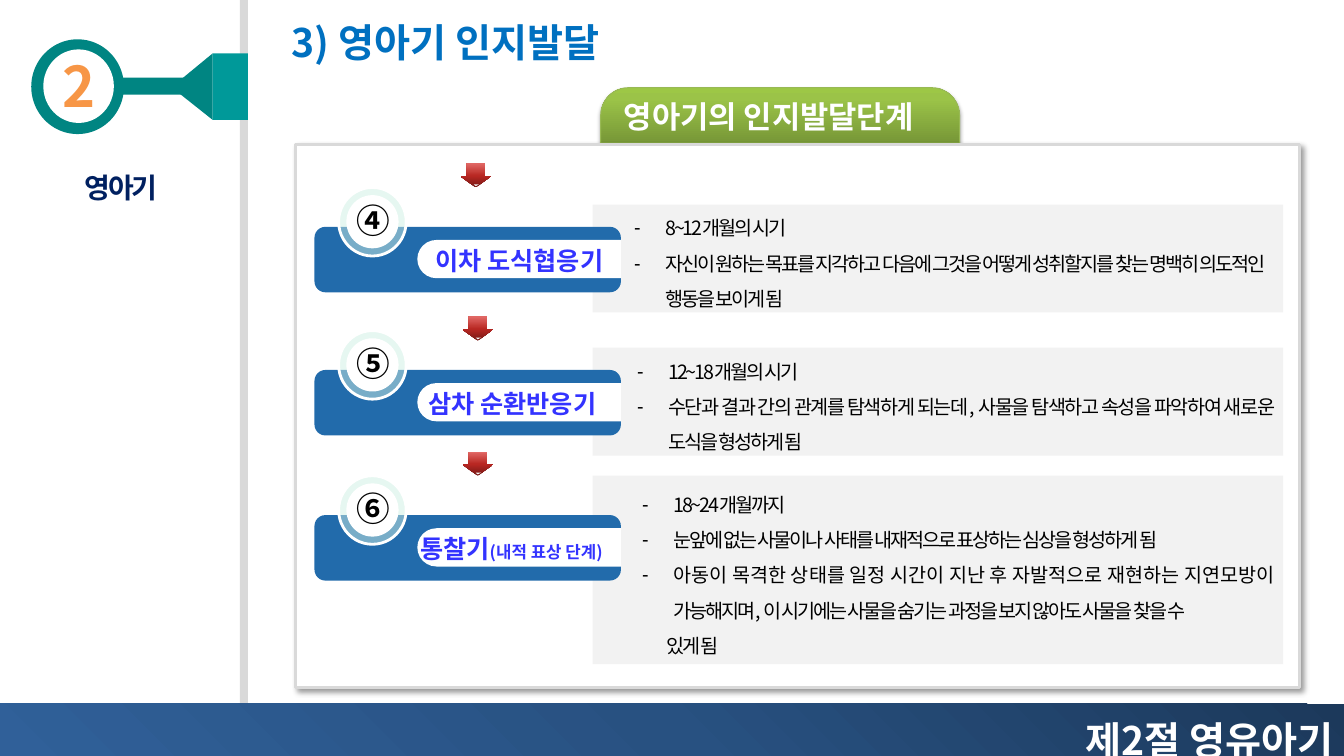
import dataclasses
import typing

import pptx
import pptx.dml.color
import pptx.enum.shapes
import pptx.enum.text
import pptx.oxml
import pptx.oxml.ns
import pptx.util

COLUMNS, ROWS = 80, 45
CELL = pptx.util.Inches(1) // 6
KIND = pptx.enum.shapes.MSO_SHAPE
ALIGN = pptx.enum.text.PP_ALIGN
Point = tuple[float, float]


class Style(typing.NamedTuple):
    size: float
    color: str
    bold: bool = True
    tracking: int = 0


class Gradient(typing.NamedTuple):
    stops: tuple[tuple[int, str], ...]
    angle: int


class Shadow(typing.NamedTuple):
    opacity: int
    blur: float
    distance: float
    angle: int


class Frame(typing.NamedTuple):
    column: float
    row: float
    columns: float
    rows: float


@dataclasses.dataclass(frozen=True)
class Theme:
    font: str = "Noto Sans CJK KR"
    white: str = "FFFFFF"
    rule: str = "D9D9D9"
    panel: str = "F2F2F2"
    teal: str = "008582"
    light_teal: str = "009999"
    bar: str = "226BAB"
    halo: str = "CFF0E5"
    tab_edge: str = "98B955"
    footer_fill: Gradient = Gradient(((0, "1C395B"), (50, "285181"), (100, "306099")), 135)
    tab_fill: Gradient = Gradient(((0, "779737"), (80, "9BC348"), (100, "9DC746")), 270)
    arrow_fill: Gradient = Gradient(((0, "761916"), (48, "B82722"), (100, "E26A67")), 270)
    chapter: Style = Style(40, "F79646")
    section: Style = Style(28, "FFFFFF")
    title: Style = Style(28, "0070C0")
    topic: Style = Style(20, "002060", tracking=-150)
    tab: Style = Style(22, "FFFFFF")
    number: Style = Style(24, "000000")
    label: Style = Style(18, "3333FF")
    label_note: Style = Style(12, "3333FF")
    body: Style = Style(14, "000000", False, -150)


THEME = Theme()


@dataclasses.dataclass(frozen=True)
class Para:
    spans: tuple[tuple[str, Style], ...]
    align: typing.Any = ALIGN.LEFT
    spacing: float = 1.0
    margin: float = 0
    bullet: bool = False


@dataclasses.dataclass(frozen=True)
class Stage:
    number: str
    label: tuple[tuple[str, Style], ...]
    label_column: float
    label_columns: float
    bar_row: float
    arrow: Point
    panel_row: float
    panel_rows: float
    list_frame: Frame
    placeholder: int
    items: tuple[Para, ...]


def item(text: str, align: typing.Any = ALIGN.LEFT) -> Para:
    return Para(((text, THEME.body),), align, 1.5, 1.86, True)


STAGES = (
    Stage("④", (("이차 도식협응기", THEME.label),), 25.32, 12.36, 13.5, (27.42, 9.72), 12.18, 6.42,
          Frame(37.14, 11.88, 39.96, 6.96), 1,
          (item("8~12개월의 시기"),
           item("자신이 원하는 목표를 지각하고 다음에 그것을 어떻게 성취할지를 찾는 명백히 의도적인 행동을 보이게 됨"))),
    Stage("⑤", (("삼차 순환반응기", THEME.label),), 24.9, 12.36, 22.02, (27.54, 18.84), 20.7, 6.42,
          Frame(37.32, 20.4, 39.06, 6.96), 2,
          (item("12~18개월의 시기"),
           item("수단과 결과 간의 관계를 탐색하게 되는데, 사물을 탐색하고 속성을 파악하여 새로운 도식을 형성하게 됨", ALIGN.JUSTIFY))),
    Stage("⑥", (("통찰기", THEME.label), ("(내적 표상 단계)", THEME.label_note)), 24.42, 13.26, 30.66,
          (27.54, 26.88), 28.32, 11.22, Frame(37.62, 28.32, 38.76, 11.22), 4,
          (item("18~24개월까지"),
           item("눈앞에 없는 사물이나 사태를 내재적으로 표상하는 심상을 형성하게 됨"),
           item("아동이 목격한 상태를 일정 시간이 지난 후 자발적으로 재현하는 지연모방이 가능해지며, "
                "이 시기에는 사물을 숨기는 과정을 보지 않아도 사물을 찾을 수", ALIGN.JUSTIFY),
           Para((("있게 됨", THEME.body),), spacing=1.5, margin=1.44))),
)
ARROW = ((0.9, 1.44), (1.8, 0.78), (1.44, 0.78), (1.44, 0), (0.36, 0), (0.36, 0.78), (0, 0.78))
ARROW_TIP = ((1.08, 1.26), (0.9, 1.36), (0.78, 1.26))
FLARE = ((10.62, 4.86), (12.66, 3.18), (12.66, 7.14), (10.62, 5.52))


def cells(count: float) -> int:
    return round(count * CELL)


def rgb(color: str) -> pptx.dml.color.RGBColor:
    return pptx.dml.color.RGBColor.from_string(color)


def element(tag: str, inner: str = "", **attributes: typing.Any) -> typing.Any:
    pairs = " ".join(f'{key}="{value}"' for key, value in attributes.items())
    return pptx.oxml.parse_xml(f'<a:{tag} {pptx.oxml.ns.nsdecls("a")} {pairs}>{inner}</a:{tag}>')


def paint(shape: typing.Any, fill: str | Gradient, line: tuple[str, float] | None = None,
          shadow: Shadow | None = None, opacity: int = 100) -> None:
    shape.shadow.inherit = False
    shape.fill.solid()
    solid = shape._element.spPr.find(pptx.oxml.ns.qn("a:solidFill"))
    if isinstance(fill, Gradient):
        stops = "".join(f'<a:gs pos="{place * 1000}"><a:srgbClr val="{color}"/></a:gs>' for place, color in fill.stops)
        inner = f'<a:gsLst>{stops}</a:gsLst><a:lin ang="{fill.angle * 60000}" scaled="0"/>'
        solid.getparent().replace(solid, element("gradFill", inner, rotWithShape=1))
    else:
        shape.fill.fore_color.rgb = rgb(fill)
        if opacity < 100:
            solid[0].append(element("alpha", val=opacity * 1000))
    if line:
        shape.line.color.rgb = rgb(line[0])
        shape.line.width = pptx.util.Pt(line[1])
    else:
        shape.line.fill.background()
    if shadow:
        tint = f'<a:srgbClr val="000000"><a:alpha val="{shadow.opacity * 1000}"/></a:srgbClr>'
        effects = shape._element.spPr.find(pptx.oxml.ns.qn("a:effectLst"))
        effects.append(element("outerShdw", tint, blurRad=pptx.util.Pt(shadow.blur), dist=pptx.util.Pt(shadow.distance),
                               dir=shadow.angle * 60000, rotWithShape=0))


def draw_shape(page: typing.Any, kind: typing.Any, frame: Frame, fill: str | Gradient,
               **finish: typing.Any) -> typing.Any:
    shape = page.shapes.add_shape(kind, *map(cells, frame))
    if kind == KIND.ROUND_2_SAME_RECTANGLE:
        shape.adjustments[0] = 0.5
    paint(shape, fill, **finish)
    return shape


def draw_outline(page: typing.Any, points: tuple[Point, ...], fill: str | Gradient, origin: Point = (0, 0)) -> None:
    corners = [(cells(origin[0] + column), cells(origin[1] + row)) for column, row in points]
    builder = page.shapes.build_freeform(*corners[0])
    builder.add_line_segments(corners[1:], close=True)
    paint(builder.convert_to_shape(), fill)


def write_para(para: typing.Any, content: Para) -> None:
    layout = {"alignment": content.align, "line_spacing": content.spacing,
              "space_before": pptx.util.Pt(0), "space_after": pptx.util.Pt(0)}
    for name, value in layout.items():
        setattr(para, name, value)
    properties = para._p.get_or_add_pPr()
    properties.set("marL", str(cells(content.margin)))
    properties.set("indent", str(-cells(content.margin) if content.bullet else 0))
    properties.append(element("buChar", char="-") if content.bullet else element("buNone"))
    for text, style in content.spans:
        span = para.add_run()
        span.text = text
        looks = {"size": pptx.util.Pt(style.size), "bold": style.bold, "name": THEME.font}
        for name, value in looks.items():
            setattr(span.font, name, value)
        span.font.color.rgb = rgb(style.color)
        run_properties = span._r.get_or_add_rPr()
        run_properties.set("spc", str(style.tracking))
        run_properties.find(pptx.oxml.ns.qn("a:latin")).addnext(element("ea", typeface=THEME.font))


def write(page: typing.Any, frame: Frame, paras: tuple[Para, ...], wrap: bool = False,
          placeholder: int | None = None) -> None:
    if placeholder is None:
        box = page.shapes.add_textbox(*map(cells, frame))
    else:
        box = next(holder for holder in page.placeholders if holder.placeholder_format.idx == placeholder)
        page.shapes._spTree.append(box._element)
        for name, value in zip(("left", "top", "width", "height"), frame):
            setattr(box, name, cells(value))
    settings = {"word_wrap": wrap, "auto_size": pptx.enum.text.MSO_AUTO_SIZE.SHAPE_TO_FIT_TEXT,
                "vertical_anchor": pptx.enum.text.MSO_ANCHOR.TOP}
    for name, value in settings.items():
        setattr(box.text_frame, name, value)
    for index, content in enumerate(paras):
        write_para(box.text_frame.add_paragraph() if index else box.text_frame.paragraphs[0], content)


def draw_surroundings(page: typing.Any) -> None:
    draw_shape(page, KIND.RECTANGLE, Frame(14.28, 0, 0.48, 42.36), THEME.rule)
    draw_shape(page, KIND.OVAL, Frame(1.86, 2.34, 5.52, 5.64), THEME.teal)
    draw_shape(page, KIND.OVAL, Frame(2.58, 2.94, 4.2, 4.38), THEME.white)
    draw_outline(page, FLARE, THEME.teal)
    draw_shape(page, KIND.RECTANGLE, Frame(12.66, 3.18, 2.1, 3.96), THEME.light_teal)
    draw_shape(page, KIND.RECTANGLE, Frame(7.02, 4.62, 4.62, 1.02), THEME.teal)
    write(page, Frame(3.12, 2.76, 3.18, 4.62), (Para((("2", THEME.chapter),), ALIGN.CENTER),))
    draw_shape(page, KIND.RECTANGLE, Frame(0, 41.88, COLUMNS, ROWS - 41.88), THEME.footer_fill)
    write(page, Frame(38.58, 40.92, 41.4, 4.86), (Para((("제2절 영유아기", THEME.section),), ALIGN.RIGHT, 1.5),), True)
    write(page, Frame(0, 8.82, 14.4, 3.24), (Para((("영아기", THEME.topic),), ALIGN.CENTER, 1.5),), True, 3)
    write(page, Frame(16.74, 0.78, 21.36, 3.42), (Para((("3) 영아기 인지발달", THEME.title),)),), placeholder=0)
    draw_shape(page, KIND.ROUND_2_SAME_RECTANGLE, Frame(35.76, 5.22, 21.36, 3.3), THEME.tab_fill,
               line=(THEME.tab_edge, 0.75), shadow=Shadow(35, 3.1, 1.8, 90))
    draw_shape(page, KIND.RECTANGLE, Frame(17.58, 8.58, 59.76, 32.34), THEME.white,
               line=(THEME.rule, 2), shadow=Shadow(40, 4, 3, 45))
    write(page, Frame(36.54, 5.52, 20.4, 2.82), (Para((("영아기의 인지발달단계", THEME.tab),)),))


def draw_stage(page: typing.Any, stage: Stage) -> None:
    row, edge = stage.bar_row, (THEME.white, 2)
    draw_shape(page, KIND.RECTANGLE, Frame(35.28, stage.panel_row, 41.1, stage.panel_rows), THEME.panel)
    draw_shape(page, KIND.ROUNDED_RECTANGLE, Frame(18.72, row, 18.24, 3.9), THEME.bar)
    draw_shape(page, KIND.ROUND_2_SAME_RECTANGLE, Frame(29.76, row - 4.14, 2.28, 12.12), THEME.white).rotation = 270
    draw_shape(page, KIND.OVAL, Frame(20.16, row - 2.34, 4.02, 4.08), THEME.halo, line=edge, opacity=50)
    draw_shape(page, KIND.OVAL, Frame(20.7, row - 1.8, 2.94, 3), THEME.white, line=edge)
    draw_outline(page, ARROW, THEME.arrow_fill, stage.arrow)
    draw_outline(page, ARROW_TIP, THEME.panel, stage.arrow)
    write(page, Frame(20.64, row - 1.92, 3.24, 3), (Para(((stage.number, THEME.number),)),))
    write(page, Frame(stage.label_column, row + 0.78, stage.label_columns, 2.4), (Para(stage.label),))
    write(page, stage.list_frame, stage.items, True, stage.placeholder)


def main() -> None:
    deck = pptx.Presentation()
    deck.slide_width, deck.slide_height = cells(COLUMNS), cells(ROWS)
    page = deck.slides.add_slide(deck.slide_layouts.get_by_name("Comparison"))
    draw_surroundings(page)
    for stage in STAGES:
        draw_stage(page, stage)
    deck.save("out.pptx")


if __name__ == "__main__":
    main()
